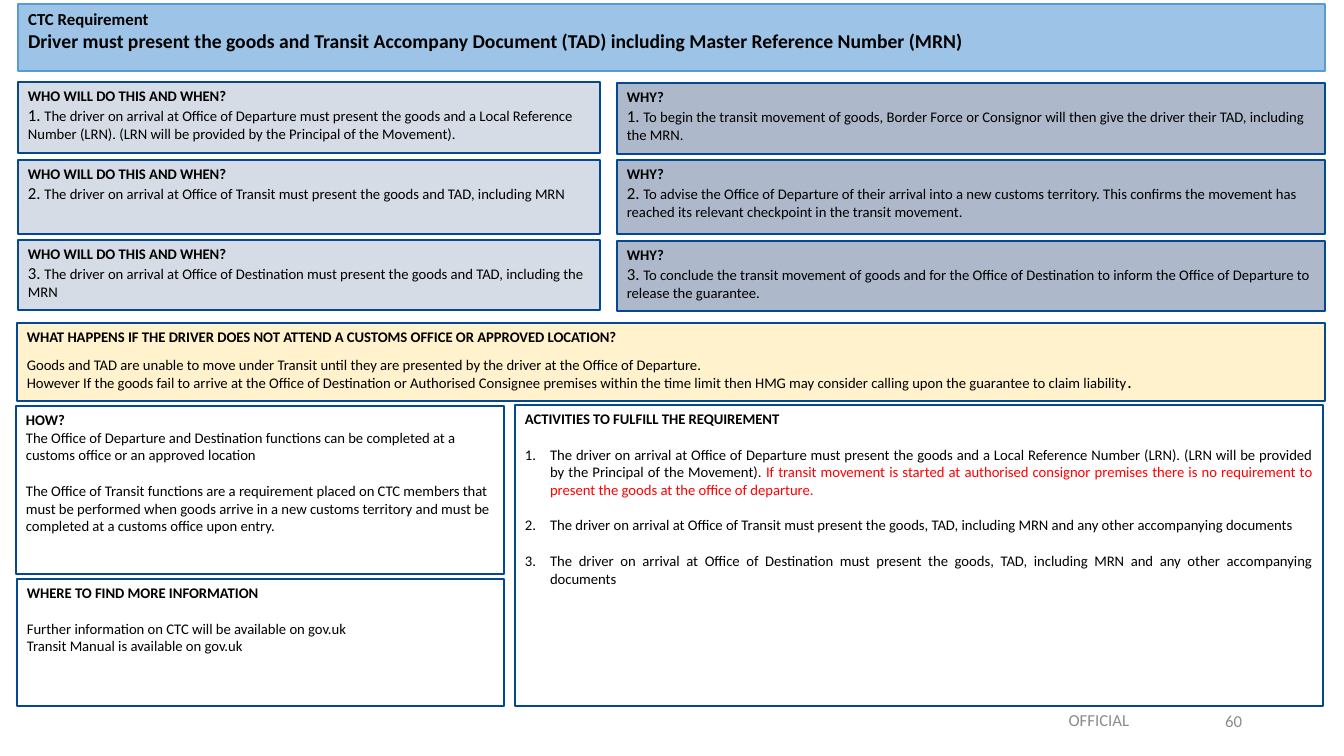
from lxml.etree import SubElement
from pptx import Presentation
from pptx.dml.color import RGBColor
from pptx.enum.shapes import MSO_SHAPE
from pptx.enum.text import MSO_ANCHOR, MSO_AUTO_SIZE, PP_ALIGN
from pptx.oxml.ns import qn
from pptx.util import Emu, Pt

EMU_PER_PX = 12192000 / 1344
BODY = 10.5
LINE_GAP = 12.8
COLORS = {
    "text": "000000", "alert": "FF0000", "footer": "8C8C8C",
    "banner": "9DC3E6", "banner_edge": "5B9BD5", "edge": "044894",
    "who": "D6DCE5", "why": "ADB9CA", "risk": "FFF2CC", "plain": "FFFFFF",
}


def px(length):
    return Emu(round(length * EMU_PER_PX))


def color(name):
    return RGBColor.from_string(COLORS[name])


def run(text, size=BODY, bold=False, ink="text"):
    return text, size, bold, ink


def line(*runs, before=0, numbered=False):
    return runs, before, numbered


def heading(text):
    return line(run(text, bold=True))


class RequirementSlide:
    font = "Calibri"

    def __init__(self, deck):
        self.slide = deck.slides.add_slide(deck.slide_layouts[5])

    def place(self, shape, box):
        shape.left, shape.top, shape.width, shape.height = map(px, box)

    def paint(self, shape, fill, edge):
        shape.fill.solid()
        shape.fill.fore_color.rgb = color(fill)
        shape.line.color.rgb = color(edge)
        shape.line.width = Pt(1)

    def number(self, paragraph):
        properties = paragraph._p.get_or_add_pPr()
        properties.set("marL", "228600")
        properties.set("indent", "-228600")
        SubElement(properties, qn("a:buFont")).set("typeface", "+mj-lt")
        SubElement(properties, qn("a:buAutoNum")).set("type", "arabicPeriod")

    def add_lines(self, shape, lines, align=PP_ALIGN.LEFT, anchor=MSO_ANCHOR.TOP):
        frame = shape.text_frame
        frame.word_wrap = True
        frame.auto_size = MSO_AUTO_SIZE.NONE
        frame.vertical_anchor = anchor
        for index, (runs, before, numbered) in enumerate(lines):
            paragraph = frame.add_paragraph() if index else frame.paragraphs[0]
            paragraph.alignment = PP_ALIGN.JUSTIFY if numbered else align
            paragraph.space_before = Pt(before)
            if numbered:
                self.number(paragraph)
            for text, size, bold, ink in runs:
                part = paragraph.add_run()
                part.text = text
                part.font.name = self.font
                part.font.size = Pt(size)
                part.font.bold = bold
                part.font.color.rgb = color(ink)

    def title(self, box, lines):
        banner = self.slide.shapes.title
        self.place(banner, box)
        self.paint(banner, "banner", "banner_edge")
        self.add_lines(banner, lines)

    def panel(self, box, fill, lines):
        panel = self.slide.shapes.add_shape(MSO_SHAPE.RECTANGLE, *map(px, box))
        panel.shadow.inherit = False
        self.paint(panel, fill, "edge")
        self.add_lines(panel, lines)

    def footer(self, box, text, align):
        label = self.slide.shapes.add_textbox(*map(px, box))
        self.add_lines(label, [line(run(text, 12, ink="footer"))], align, MSO_ANCHOR.MIDDLE)


STEPS = [
    (82, 83, 71,
     "The driver on arrival at Office of Departure must present the goods and a Local Reference "
     "Number (LRN). (LRN will be provided by the Principal of the Movement).",
     "To begin the transit movement of goods, Border Force or Consignor will then give the driver "
     "their TAD, including the MRN."),
    (160, 160, 74,
     "The driver on arrival at Office of Transit must present the goods and TAD, including MRN",
     "To advise the Office of Departure of their arrival into a new customs territory. This confirms "
     "the movement has reached its relevant checkpoint in the transit movement."),
    (240, 241, 70,
     "The driver on arrival at Office of Destination must present the goods and TAD, including the MRN",
     "To conclude the transit movement of goods and for the Office of Destination to inform the "
     "Office of Departure to release the guarantee."),
]


def main():
    deck = Presentation()
    deck.slide_width, deck.slide_height = px(1344), px(756)
    page = RequirementSlide(deck)

    page.title((18, 4, 1307, 67), [
        line(run("CTC Requirement", 12, True)),
        line(run("Driver must present the goods and Transit Accompany Document (TAD) "
                 "including Master Reference Number (MRN)", 14, True)),
    ])

    for step, (who_top, why_top, height, who, why) in enumerate(STEPS, 1):
        marker = run(f"{step}. ", 12)
        page.panel((18, who_top, 582, height), "who",
                   [heading("WHO WILL DO THIS AND WHEN?"), line(marker, run(who))])
        page.panel((617, why_top, 708, height), "why",
                   [heading("WHY?"), line(marker, run(why))])

    page.panel((17, 323, 1308, 78), "risk", [
        heading("WHAT HAPPENS IF THE DRIVER DOES NOT ATTEND A CUSTOMS OFFICE OR APPROVED LOCATION?"),
        line(run("Goods and TAD are unable to move under Transit until they are presented by the "
                 "driver at the Office of Departure."), before=7.3),
        line(run("However If the goods fail to arrive at the Office of Destination or Authorised "
                 "Consignee premises within the time limit then HMG may consider calling upon the "
                 "guarantee to claim liability"), run(".", bold=True)),
    ])

    page.panel((16, 406, 488, 168), "plain", [
        heading("HOW?"),
        line(run("The Office of Departure and Destination functions can be completed at a customs "
                 "office or an approved location")),
        line(run("The Office of Transit functions are a requirement placed on CTC members that must "
                 "be performed when goods arrive in a new customs territory and must be completed "
                 "at a customs office upon entry."), before=LINE_GAP),
    ])

    page.panel((17, 579, 487, 127), "plain", [
        heading("WHERE TO FIND MORE INFORMATION"),
        line(run("Further information on CTC will be available on gov.uk"), before=LINE_GAP),
        line(run("Transit Manual is available on gov.uk")),
    ])

    activities = [
        [run("The driver on arrival at Office of Departure must present the goods and a Local "
             "Reference Number (LRN). (LRN will be provided by the Principal of the Movement). "),
         run("If transit movement is started at authorised consignor premises there is no "
             "requirement to present the goods at the office of departure.", ink="alert")],
        [run("The driver on arrival at Office of Transit must present the goods, TAD, including "
             "MRN and any other accompanying documents")],
        [run("The driver on arrival at Office of Destination must present the goods, TAD, "
             "including MRN and any other accompanying documents")],
    ]
    page.panel((515, 405, 808, 301), "plain", [
        heading("ACTIVITIES TO FULFILL THE REQUIREMENT"),
        *(line(*runs, before=LINE_GAP, numbered=True) for runs in activities),
    ])

    page.footer((872, 700, 454, 40), "OFFICIAL", PP_ALIGN.CENTER)
    page.footer((1203, 701, 49, 40), "60", PP_ALIGN.RIGHT)

    deck.save("out.pptx")


if __name__ == "__main__":
    main()
